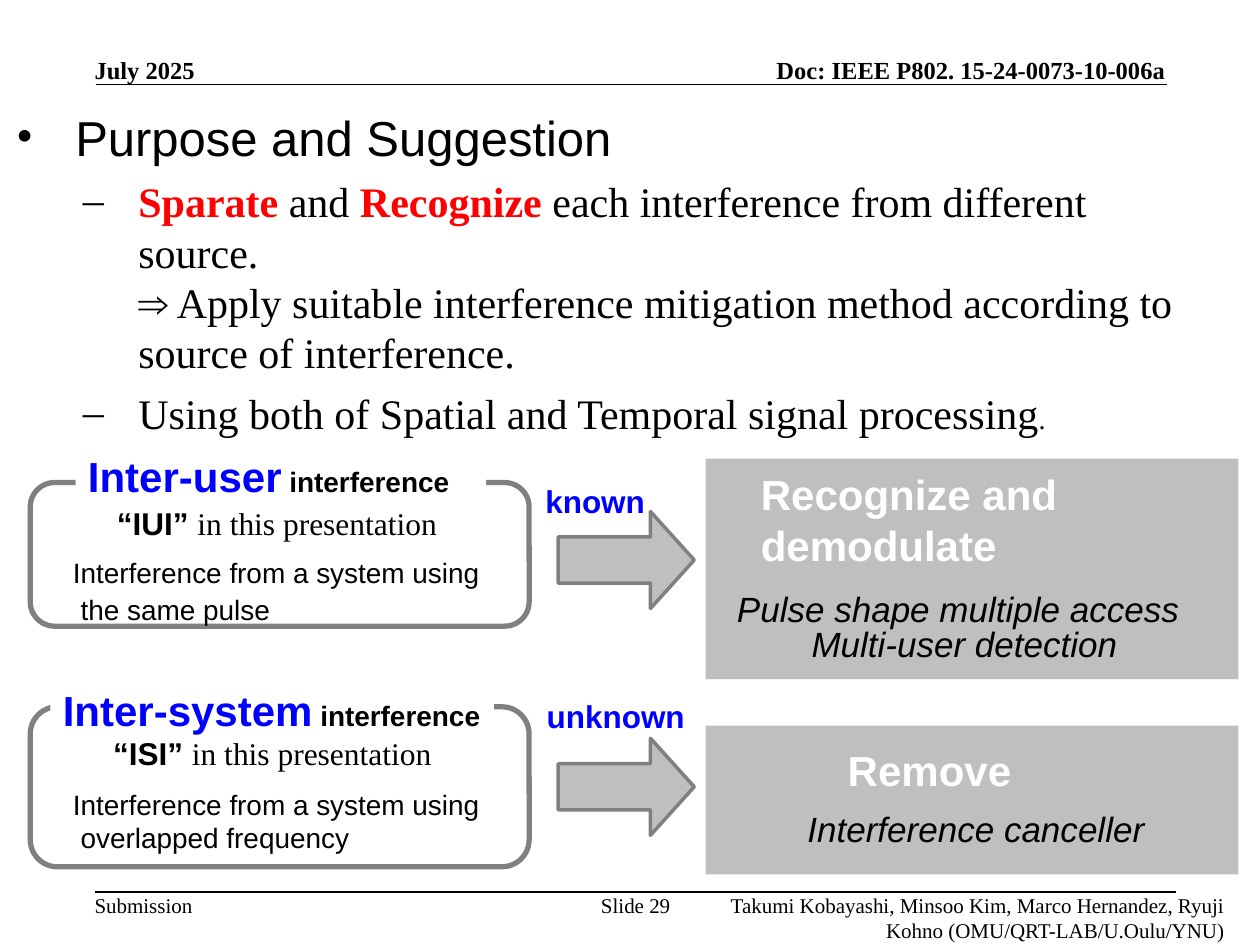
from dataclasses import dataclass
from typing import NamedTuple

from lxml.etree import SubElement
from pptx import Presentation
from pptx.dml.color import RGBColor
from pptx.enum.shapes import MSO_CONNECTOR as Conn, MSO_SHAPE as Form
from pptx.enum.text import MSO_ANCHOR as Anchor, MSO_AUTO_SIZE as Auto, PP_ALIGN as Align
from pptx.oxml.ns import qn
from pptx.util import Pt

PX = 9144  # EMU per px, 100 px to the inch
SANS, SERIF = "Arial", "Times New Roman"
BLACK, WHITE, BLUE, RED = "000000", "FFFFFF", "0000FF", "FF0000"
GREY, EDGE = "BFBFBF", "808080"


class Box(NamedTuple):
    x: int
    y: int
    w: int
    h: int


@dataclass
class Run:
    text: str
    size: int
    color: str = BLACK
    bold: bool = False
    italic: bool = False
    font: str = SANS


@dataclass
class Para:
    runs: list[Run]
    left: int = 0
    hang: int = 0
    gap: float = 0
    mark: str = ""
    align: Align = Align.LEFT


@dataclass
class Label:
    box: Box
    paras: list[Para]
    wrap: bool = True
    fill: str = ""
    inset: tuple[int, int] = (10, 5)
    anchor: Anchor = Anchor.TOP
    grow: bool = True


def rgb(code: str) -> RGBColor:
    return RGBColor.from_string(code)


def emu(box: Box) -> list[int]:
    return [v * PX for v in box]


def add_run(para, run: Run) -> None:
    for i, part in enumerate(run.text.split("\n")):
        if i:
            para.add_line_break()
        item = para.add_run()
        item.text = part
        look = {"size": Pt(run.size), "bold": run.bold, "italic": run.italic, "name": run.font}
        for key, val in look.items():
            setattr(item.font, key, val)
        item.font.color.rgb = rgb(run.color)


def add_para(para, data: Para) -> None:
    para.alignment = data.align
    para.space_before = Pt(data.gap)
    if data.mark:
        props = para._p.get_or_add_pPr()
        props.set("marL", str(data.left * PX))
        props.set("indent", str(-data.hang * PX))
        tint = SubElement(props, qn("a:buClr"))
        SubElement(tint, qn("a:srgbClr"), val=BLACK)
        SubElement(props, qn("a:buFont"), typeface=SERIF)
        SubElement(props, qn("a:buChar"), char=data.mark)
    for run in data.runs:
        add_run(para, run)


def add_label(shapes, data: Label) -> None:
    shape = shapes.add_textbox(*emu(data.box))
    frame = shape.text_frame
    side, top = (v * PX for v in data.inset)
    look = {
        "word_wrap": data.wrap, "vertical_anchor": data.anchor,
        "auto_size": Auto.SHAPE_TO_FIT_TEXT if data.grow else Auto.NONE,
        "margin_left": side, "margin_right": side, "margin_top": top, "margin_bottom": top,
    }
    for key, val in look.items():
        setattr(frame, key, val)
    if data.fill:
        shape.fill.solid()
        shape.fill.fore_color.rgb = rgb(data.fill)
    for i, para in enumerate(data.paras):
        add_para(frame.add_paragraph() if i else frame.paragraphs[0], para)


def add_form(shapes, form: Form, box: Box, fill: str = "", edge: str = "",
             width: int = 0, adjust: tuple[float, ...] = ()) -> None:
    shape = shapes.add_shape(form, *emu(box))
    shape.shadow.inherit = False
    for i, val in enumerate(adjust):
        shape.adjustments[i] = val
    for part, code in ((shape.fill, fill), (shape.line.fill, edge)):
        if code:
            part.solid()
            part.fore_color.rgb = rgb(code)
        else:
            part.background()
    if edge:
        shape.line.width = Pt(width)


def add_rule(shapes, x: int, y: int, end: int) -> None:
    rule = shapes.add_connector(Conn.STRAIGHT, x * PX, y * PX, end * PX, y * PX)
    rule.line.color.rgb = rgb(BLACK)
    rule.line.width = Pt(1)
    SubElement(rule._element.spPr, qn("a:effectLst"))


def edge_text(box: Box, text: str, size: int, align: Align = Align.LEFT,
              bold: bool = False) -> Label:
    anchor = Anchor.BOTTOM if bold else Anchor.TOP
    run = Run(text, size, bold=bold, font=SERIF)
    return Label(box, [Para([run], align=align)], inset=(0, 0), anchor=anchor, grow=False)


def plain(box: Box, *runs: Run, wrap: bool = False, align: Align = Align.LEFT,
          fill: str = "") -> Label:
    return Label(box, [Para(list(runs), align=align)], wrap, fill)


def title(box: Box, name: str) -> Label:
    return plain(box, Run(name, 24, BLUE, True), Run(" ", 16, BLUE, True),
                 Run("interference", 16, bold=True), wrap=True, fill=WHITE)


def alias(box: Box, name: str) -> Label:
    return plain(box, Run(f"“{name}” ", 18, bold=True),
                 Run("in this presentation", 18, font=SERIF))


def state(box: Box, text: str) -> Label:
    return plain(box, Run(text, 18, BLUE, True))


def action(box: Box, text: str) -> Label:
    return plain(box, Run(text, 24, WHITE, True), wrap=True)


def method(box: Box, text: str, wrap: bool = True) -> Label:
    return plain(box, Run(text, 20, italic=True), wrap=wrap,
                 align=Align.CENTER if wrap else Align.LEFT)


def point(*runs: Run) -> Para:
    return Para(list(runs), 100, 44, 5.6, "–")


def serif(text: str, color: str = BLACK, size: int = 24) -> Run:
    return Run(text, size, color, color == RED, font=SERIF)


HEAD = [
    edge_text(Box(75, 43, 175, 24), "July 2025", 14, bold=True),
    edge_text(Box(400, 43, 525, 24), "Doc: IEEE P802. 15-24-0073-10-006a", 14, Align.RIGHT, True),
    edge_text(Box(75, 708, 78, 20), "Submission", 12),
    edge_text(Box(475, 708, 59, 20), "Slide 29", 12, Align.CENTER),
    edge_text(Box(555, 708, 417, 20), "Takumi Kobayashi, Minsoo Kim, Marco Hernandez, "
              "Ryuji Kohno (OMU/QRT-LAB/U.Oulu/YNU)", 12, Align.RIGHT),
]
BODY = Label(Box(0, 75, 950, 183), [
    Para([Run("Purpose and Suggestion", 28)], 50, 47, 6.4, "•"),
    point(serif("Sparate ", RED), serif("and "), serif("Recognize ", RED),
          serif("each interference from different source. \n⇒ Apply suitable interference "
                "mitigation method according to source of interference.")),
    point(serif("Using both of Spatial and Temporal signal processing"), serif(".", size=16)),
], inset=(10, 10), grow=False)
CAUSE = "Interference from a system using\n "
TEXTS = [
    # Known interference
    title(Box(60, 353, 326, 51), "Inter-user"),
    alias(Box(83, 395, 274, 40), "IUI"),
    plain(Box(48, 436, 348, 67), Run(CAUSE + "the same pulse", 16), Run(" ", 18, bold=True)),
    state(Box(423, 378, 100, 40), "known"),
    action(Box(594, 367, 349, 91), "Recognize and demodulate"),
    method(Box(569, 461, 383, 43), "Pulse shape multiple access"),
    method(Box(574, 489, 383, 43), "Multi-user detection"),
    # Unknown interference
    title(Box(40, 538, 352, 50), "Inter-system"),
    alias(Box(80, 578, 273, 40), "ISI"),
    plain(Box(48, 620, 348, 64), Run(CAUSE + "overlapped frequency", 16)),
    state(Box(424, 548, 131, 40), "unknown"),
    action(Box(663, 586, 200, 51), "Remove"),
    method(Box(631, 636, 290, 44), "Interference canceller", wrap=False),
]
# Top and height of frame and panel, then top of arrow
ROWS = [(383, 114, 364, 175, 406), (561, 127, 576, 118, 586)]


def main() -> None:
    deck = Presentation()
    deck.slide_width, deck.slide_height = 1000 * PX, 750 * PX
    shapes = deck.slides.add_slide(deck.slide_layouts[6]).shapes

    # Header, footer and main points
    add_rule(shapes, 76, 67, 926)
    add_rule(shapes, 75, 708, 933)
    for item in [*HEAD, BODY]:
        add_label(shapes, item)

    # Frame, panel and arrow of each row
    for top, tall, y, h, mid in ROWS:
        add_form(shapes, Form.ROUNDED_RECTANGLE, Box(24, top, 396, tall), "", EDGE, 3, (0.17,))
        add_form(shapes, Form.RECTANGLE, Box(560, y, 423, h), GREY)
        add_form(shapes, Form.RIGHT_ARROW, Box(443, mid, 108, 77), GREY, EDGE, 2, (0.475, 0.451))

    # Row texts
    for item in TEXTS:
        add_label(shapes, item)
    deck.save("out.pptx")


if __name__ == "__main__":
    main()
